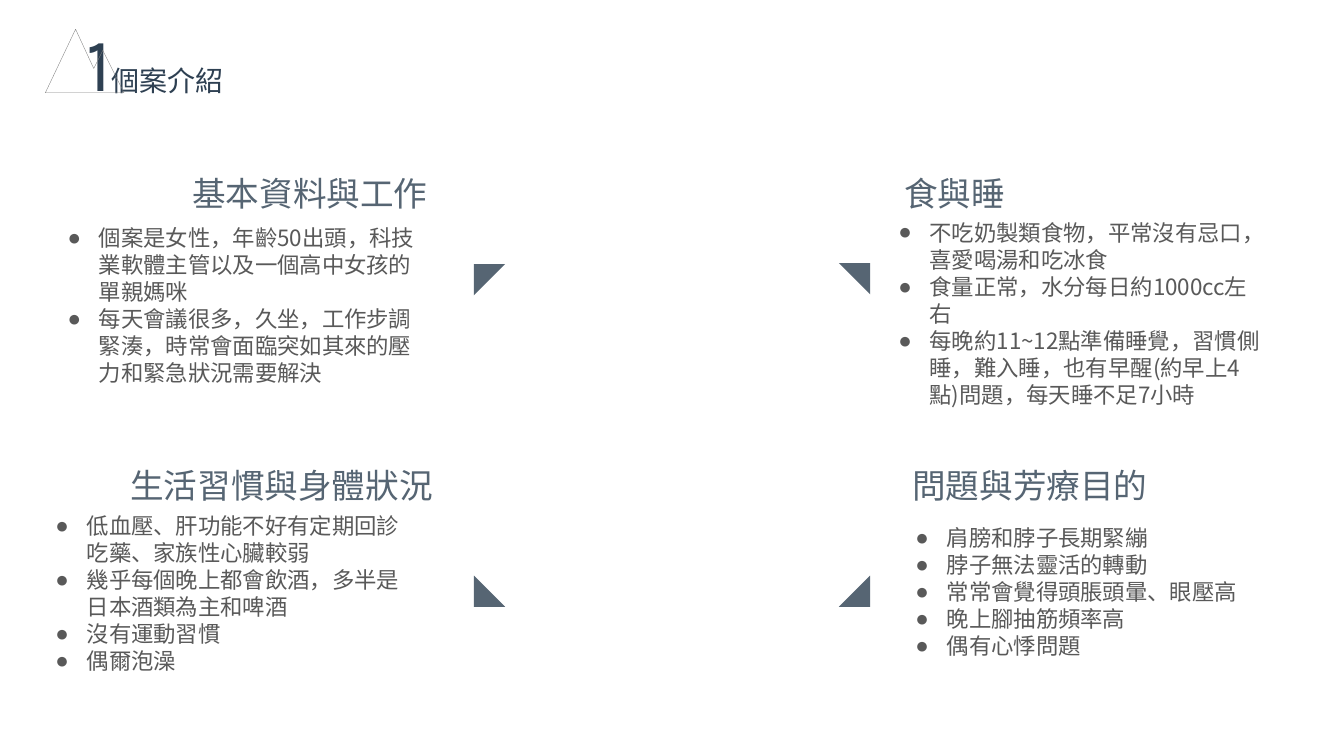
"""Build the case introduction slide with four topics around an open centre."""
from lxml import etree
from pptx import Presentation
from pptx.dml.color import RGBColor
from pptx.enum.shapes import MSO_SHAPE
from pptx.enum.text import MSO_ANCHOR, MSO_AUTO_SIZE, PP_ALIGN
from pptx.oxml.ns import qn
from pptx.util import Inches, Pt

LEFT, RIGHT = PP_ALIGN.LEFT, PP_ALIGN.RIGHT
TOP = MSO_ANCHOR.TOP
NO_AUTOFIT = MSO_AUTO_SIZE.NONE
RIGHT_TRIANGLE = MSO_SHAPE.RIGHT_TRIANGLE

NAVY = RGBColor(0x2E, 0x40, 0x52)
SLATE = RGBColor(0x56, 0x65, 0x73)
TEXT_GRAY = RGBColor(0x59, 0x59, 0x59)
OUTLINE_GRAY = RGBColor(0x80, 0x80, 0x80)
TITLE_FONT = "Karla"
BODY_FONT = "Noto Sans CJK SC"

TOPICS = [
    {
        "heading": "基本資料與工作",
        "heading_box": (1.71, 1.66, 2.63, 0.5),
        "align": RIGHT,
        "list_box": (0.57, 2.17, 3.82, 1.72),
        "items": [
            "個案是女性，年齡50出頭，科技業軟體主管以及一個高中女孩的單親媽咪",
            "每天會議很多，久坐，工作步調緊湊，時常會面臨突如其來的壓力和緊急狀況需要解決",
        ],
        "corner": (4.7, 2.62, 90),
    },
    {
        "heading": "食與睡",
        "heading_box": (8.87, 1.66, 2.63, 0.5),
        "align": LEFT,
        "list_box": (8.81, 2.12, 3.82, 2.26),
        "items": [
            "不吃奶製類食物，平常沒有忌口，喜愛喝湯和吃冰食",
            "食量正常，水分每日約1000cc左右",
            "每晚約11~12點準備睡覺，習慣側睡，難入睡，也有早醒(約早上4點)問題，每天睡不足7小時",
        ],
        "corner": (8.32, 2.61, 180),
    },
    {
        "heading": "生活習慣與身體狀況",
        "heading_box": (0.95, 4.56, 3.44, 0.5),
        "align": RIGHT,
        "list_box": (0.45, 5.03, 3.82, 1.72),
        "items": [
            "低血壓、肝功能不好有定期回診吃藥、家族性心臟較弱",
            "幾乎每個晚上都會飲酒，多半是日本酒類為主和啤酒",
            "沒有運動習慣",
            "偶爾泡澡",
        ],
        "corner": (4.7, 5.71, 0),
    },
    {
        "heading": "問題與芳療目的",
        "heading_box": (8.95, 4.56, 2.63, 0.5),
        "align": LEFT,
        "list_box": (8.98, 5.15, 3.4, 1.45),
        "items": [
            "肩膀和脖子長期緊繃",
            "脖子無法靈活的轉動",
            "常常會覺得頭脹頭暈、眼壓高",
            "晚上腳抽筋頻率高",
            "偶有心悸問題",
        ],
        "corner": (8.32, 5.71, 270),
    },
]


def place_text_frame(shape, box):
    shape.left, shape.top, shape.width, shape.height = map(Inches, box)
    frame = shape.text_frame
    frame.word_wrap = True
    frame.auto_size = NO_AUTOFIT
    frame.vertical_anchor = TOP
    return frame


def write_text(paragraph, text, *, size, color, font=BODY_FONT, align=LEFT,
               line_height=None, bullet=None):
    paragraph.alignment = align
    paragraph.space_before = Pt(0)
    if line_height:
        paragraph.line_spacing = Pt(line_height)
    run = paragraph.add_run()
    run.text = text
    run.font.size = Pt(size)
    run.font.bold = False
    run.font.color.rgb = color
    run.font.name = font
    east_asian = etree.SubElement(run.font._element, qn("a:ea"))
    east_asian.set("typeface", BODY_FONT)
    if bullet:
        properties = paragraph._p.get_or_add_pPr()
        properties.set("marL", str(Inches(0.31)))
        properties.set("indent", str(-Inches(0.31)))
        etree.SubElement(properties, qn("a:buChar")).set("char", bullet)


presentation = Presentation()
presentation.slide_width = Inches(13.33)
presentation.slide_height = Inches(7.5)
comparison_layout = presentation.slide_layouts[4]
slide = presentation.slides.add_slide(comparison_layout)

mountain_points = [
    (Inches(x), Inches(y))
    for x, y in [(0.75, 0.29), (0.93, 0.68), (1.02, 0.5), (1.23, 0.92), (0.45, 0.92)]
]
builder = slide.shapes.build_freeform(*mountain_points[0])
builder.add_line_segments(mountain_points[1:], close=True)
mountains = builder.convert_to_shape()
mountains.shadow.inherit = False
mountains.fill.background()
mountains.line.color.rgb = OUTLINE_GRAY
mountains.line.width = Pt(0.25)

title, *list_placeholders = slide.placeholders
title_paragraph = place_text_frame(title, (0.76, 0.11, 1.83, 1.01)).paragraphs[0]
for text, size in [("1", 54), ("個案介紹", 20)]:
    write_text(title_paragraph, text, size=size, color=NAVY, font=TITLE_FONT)

for topic, list_placeholder in zip(TOPICS, list_placeholders):
    heading_box = slide.shapes.add_textbox(0, 0, 0, 0)
    heading = place_text_frame(heading_box, topic["heading_box"])
    write_text(heading.paragraphs[0], topic["heading"], size=24, color=SLATE,
               align=topic["align"], line_height=29)

    body = place_text_frame(list_placeholder, topic["list_box"])
    for index, item in enumerate(topic["items"]):
        paragraph = body.add_paragraph() if index else body.paragraphs[0]
        write_text(paragraph, item, size=16, color=TEXT_GRAY,
                   line_height=19.3, bullet="●")

    left, top, rotation = topic["corner"]
    corner = slide.shapes.add_shape(
        RIGHT_TRIANGLE, Inches(left), Inches(top), Inches(0.31), Inches(0.31))
    corner.rotation = rotation
    corner.shadow.inherit = False
    corner.fill.solid()
    corner.fill.fore_color.rgb = SLATE
    corner.line.fill.background()

presentation.save("out.pptx")
